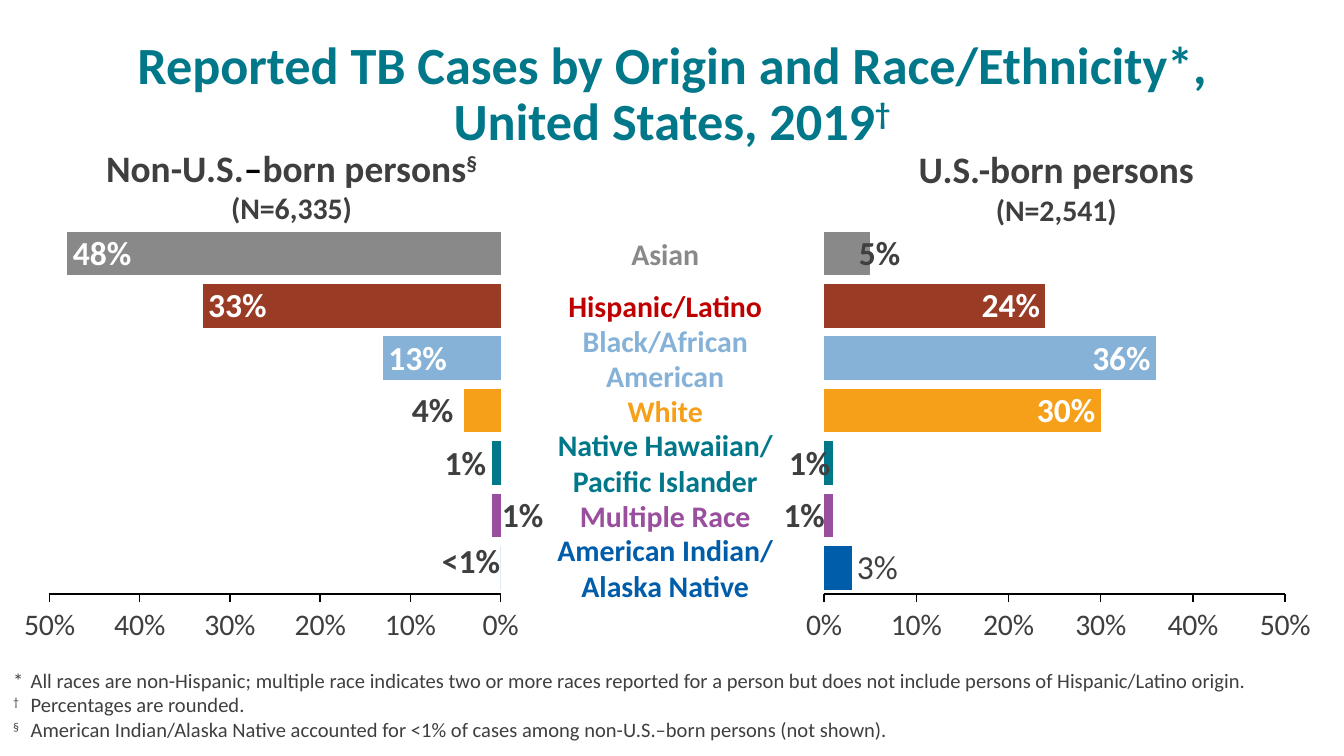
from dataclasses import dataclass, field
from typing import Optional

from lxml.etree import SubElement
from pptx import Presentation
from pptx.chart.data import CategoryChartData as ChartData
from pptx.dml.color import RGBColor as Rgb
from pptx.enum.chart import XL_CHART_TYPE as Kind
from pptx.enum.chart import XL_LABEL_POSITION as Place
from pptx.enum.chart import XL_TICK_LABEL_POSITION as TickText
from pptx.enum.chart import XL_TICK_MARK as Tick
from pptx.enum.text import MSO_ANCHOR as Anchor
from pptx.enum.text import MSO_AUTO_SIZE as Auto
from pptx.enum.text import PP_ALIGN as Align
from pptx.oxml import parse_xml
from pptx.oxml.ns import qn
from pptx.util import Inches, Pt

FONT = "Calibri"
HUES = {
    "teal": "00788A", "text": "3F3F3F", "black": "000000", "white": "FFFFFF",
    "gray": "898989", "brick": "9A3B26", "red": "C00000", "sky": "86B2D8",
    "gold": "F6A01A", "plum": "9A4E9E", "blue": "005DAA",
}
BARS = ["blue", "plum", "teal", "gold", "sky", "brick", "gray"]


@dataclass
class Run:
    text: str
    hue: Optional[str] = None
    high: bool = False


@dataclass
class Line:
    runs: list[Run]
    size: int


@dataclass
class Tag:
    index: int
    shift: float = 0
    bold: bool = True


@dataclass
class Graph:
    left: float
    width: float
    share: float
    values: list[float]
    tags: list[Tag]
    flip: bool = False
    blank: list[int] = field(default_factory=list)


@dataclass
class Head:
    left: float
    top: float
    width: float
    lines: list[Line]


@dataclass
class Group:
    text: str
    hue: str


GRAPHS = [
    Graph(5.83, 4.1, 0.84, [0.03, 0.01, 0.01, 0.3, 0.36, 0.24, 0.05],
          [Tag(0, bold=False), Tag(1, -0.1), Tag(2, -0.09), Tag(6, -0.03)]),
    Graph(0.07, 4.25, 0.79, [0, 0.01, 0.01, 0.04, 0.13, 0.33, 0.48],
          [Tag(1, 0.1), Tag(2), Tag(3, -0.01)], flip=True, blank=[0]),
]
HEADS = [
    Head(0.64, 1.03, 3.06, [
        Line([Run("Non-U.S."), Run("–", "black"), Run("born persons"),
              Run("§", high=True)], 20),
        Line([Run("(N=6,335)")], 16)]),
    Head(6.69, 1.04, 2.34, [
        Line([Run("U.S.-born persons")], 20), Line([Run("(N=2,541)")], 16)]),
]
GROUPS = [
    Group("Asian", "gray"), Group("Hispanic/Latino", "red"),
    Group("Black/African American", "sky"), Group("White", "gold"),
    Group("Native Hawaiian/ Pacific Islander", "teal"),
    Group("Multiple Race", "plum"),
    Group("American Indian/ Alaska Native", "blue"),
]
NOTES = [
    Line([Run("*\tAll races are non-Hispanic; multiple race indicates two or "
              "more races reported for a person but does not include persons "
              "of Hispanic/Latino origin.")], 11),
    Line([Run("†", high=True), Run("\tPercentages are rounded.")], 11),
    Line([Run("§", high=True),
          Run("\tAmerican Indian/Alaska Native accounted for <1% of cases "
              "among non-U.S.–born persons (not shown).")], 11),
]


def style(font, size: int, hue: str, bold: bool = False) -> None:
    font.name, font.size, font.bold = FONT, Pt(size), bold
    font.color.rgb = Rgb.from_string(HUES[hue])


def write(frame, lines: list[Line], hue: str, bold: bool, align=Align.LEFT) -> None:
    for i, line in enumerate(lines):
        para = frame.add_paragraph() if i else frame.paragraphs[0]
        para.alignment = align
        style(para.font, line.size, hue, bold)
        for part in line.runs:
            run = para.add_run()
            run.text = part.text
            if part.hue:
                run.font.color.rgb = Rgb.from_string(HUES[part.hue])
            if part.high:
                run._r.get_or_add_rPr().set("baseline", "30000")


def add_box(slide, left: float, top: float, width: float, height: float,
            wrap: bool = True):
    frame = slide.shapes.add_textbox(
        Inches(left), Inches(top), Inches(width), Inches(height)).text_frame
    frame.word_wrap = wrap
    return frame


def lay_out(node, index: int, **spots) -> None:
    for old in node.findall(qn("c:layout")):
        node.remove(old)
    lay = parse_xml('<c:layout xmlns:c="http://schemas.openxmlformats.org/'
                    'drawingml/2006/chart"><c:manualLayout/></c:layout>')
    for name, value in spots.items():
        SubElement(lay[0], qn(f"c:{name}")).set("val", str(value))
    node.insert(index, lay)


def add_graph(slide, graph: Graph) -> None:
    data = ChartData(number_format="0%")
    data.categories = [str(n) for n in range(1, 8)]
    data.add_series("Series 1", graph.values)
    chart = slide.shapes.add_chart(
        Kind.BAR_CLUSTERED, Inches(graph.left), Inches(1.56),
        Inches(graph.width), Inches(3.29), data).chart
    chart.has_legend = chart.has_title = False
    style(chart.font, 10, "black")
    lay_out(chart._chartSpace.chart.plotArea, 0, layoutTarget="inner",
            xMode="edge", yMode="edge", x=0.07, y=0.04, w=graph.share, h=0.83)

    chart.category_axis.visible = False
    axis = chart.value_axis
    axis.minimum_scale, axis.maximum_scale, axis.major_unit = 0, 0.5, 0.1
    axis.has_major_gridlines = False
    axis.major_tick_mark, axis.minor_tick_mark = Tick.OUTSIDE, Tick.NONE
    axis.tick_label_position = TickText.NEXT_TO_AXIS
    axis.reverse_order = graph.flip
    axis.tick_labels.number_format = "0%"
    axis.tick_labels.number_format_is_linked = False
    style(axis.tick_labels.font, 16, "text")
    axis.format.line.width = Pt(0.75)
    axis.format.line.color.rgb = Rgb.from_string(HUES["black"])

    plot = chart.plots[0]
    plot.gap_width, plot.vary_by_categories = 20, False
    bars = plot.series[0]
    for i, hue in enumerate(BARS):
        fill = bars.points[i].format.fill
        fill.solid()
        fill.fore_color.rgb = Rgb.from_string(HUES[hue])

    tags = bars.data_labels
    tags.show_value, tags.position = True, Place.INSIDE_END
    tags.number_format, tags.number_format_is_linked = "0%", False
    style(tags.font, 18, "white", True)
    for lead in bars._element.xpath("c:dLbls/c:showLeaderLines"):
        lead.set("val", "0")
    for tag in graph.tags:
        label = bars.points[tag.index].data_label
        style(label.font, 18, "text", tag.bold)
        label.position = Place.OUTSIDE_END
        if tag.shift:
            node = bars._element.xpath(f"c:dLbls/c:dLbl[c:idx/@val={tag.index}]")[0]
            lay_out(node, 1, x=tag.shift, y=0)
    for i in graph.blank:
        bars.points[i].data_label.position = Place.INSIDE_END
        node = bars._element.xpath(f"c:dLbls/c:dLbl[c:idx/@val={i}]")[0]
        for child in list(node)[1:]:
            node.remove(child)
        SubElement(node, qn("c:delete")).set("val", "1")


def add_title(slide) -> None:
    title = slide.shapes.title
    title.left, title.top = Inches(0.5), Inches(0.23)
    title.width, title.height = Inches(9), Inches(0.94)
    frame = title.text_frame
    frame.auto_size, frame.vertical_anchor = Auto.NONE, Anchor.BOTTOM
    write(frame, [Line([
        Run("Reported TB Cases by Origin and Race/Ethnicity*, United States, 2019"),
        Run("†", high=True)], 28)], "teal", True, Align.CENTER)
    frame.paragraphs[0].line_spacing = Pt(30)


def main() -> None:
    deck = Presentation()
    deck.slide_width, deck.slide_height = Inches(10), Inches(10 * 9 / 16)
    slide = deck.slides.add_slide(deck.slide_layouts[5])
    add_title(slide)
    for graph in GRAPHS:
        add_graph(slide, graph)
    for head in HEADS:
        frame = add_box(slide, head.left, head.top, head.width, 0.71, False)
        write(frame, head.lines, "text", True, Align.CENTER)
    for i, group in enumerate(GROUPS):
        frame = add_box(slide, 3.91, 1.75 + 0.39 * i, 2.08, 0.27)
        frame.vertical_anchor = Anchor.MIDDLE
        write(frame, [Line([Run(group.text)], 16)], group.hue, True, Align.CENTER)
    frame = add_box(slide, 3.19, 3.97, 0.64, 0.4, False)
    write(frame, [Line([Run("<1%")], 18)], "text", True)
    frame = add_box(slide, 0, 4.92, 10, 0.77)
    write(frame, NOTES, "text", False)
    for para in frame.paragraphs:
        props = para._p.get_or_add_pPr()
        props.set("marL", str(Inches(0.13)))
        props.set("indent", str(Inches(-0.13)))
    deck.save("out.pptx")


if __name__ == "__main__":
    main()
